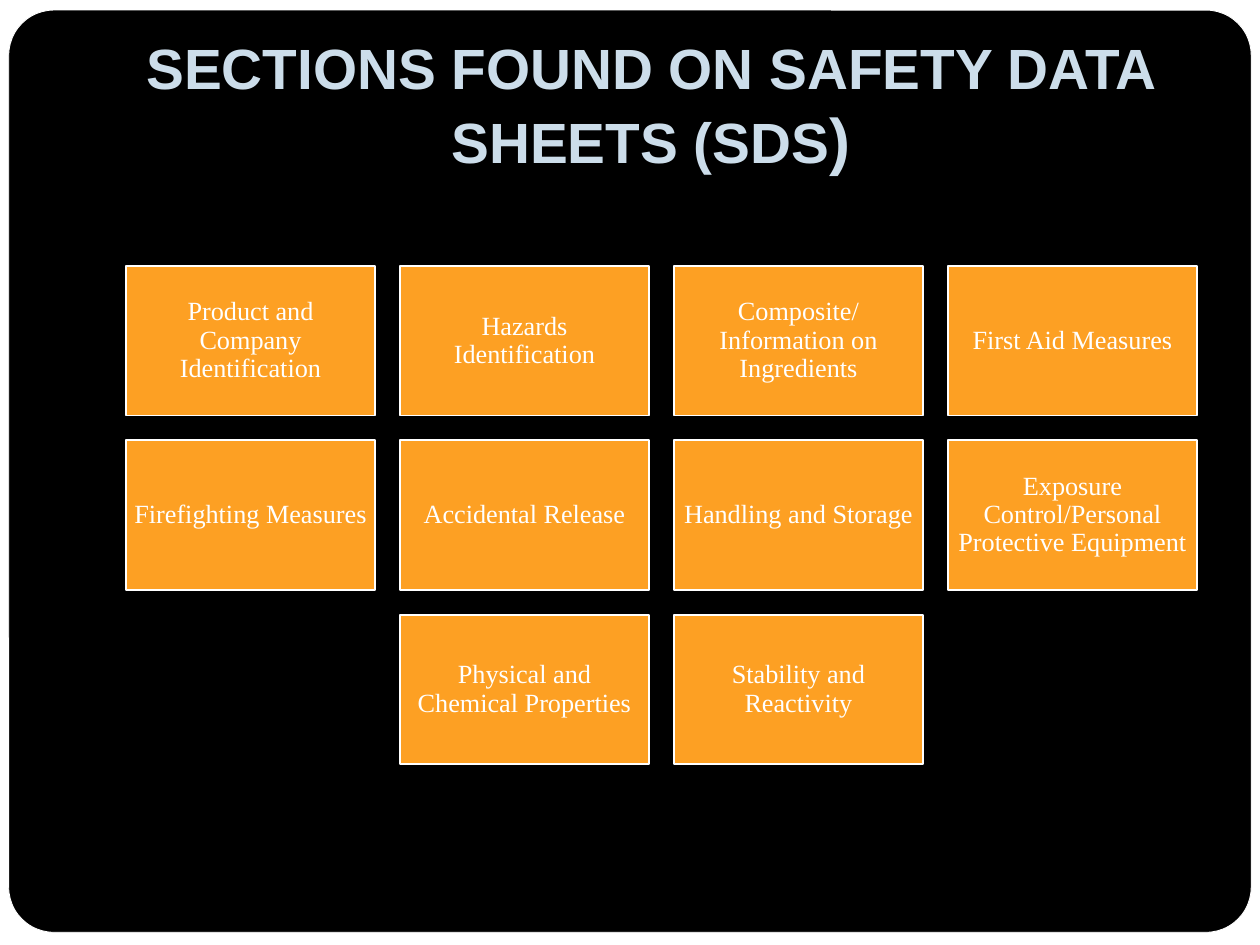
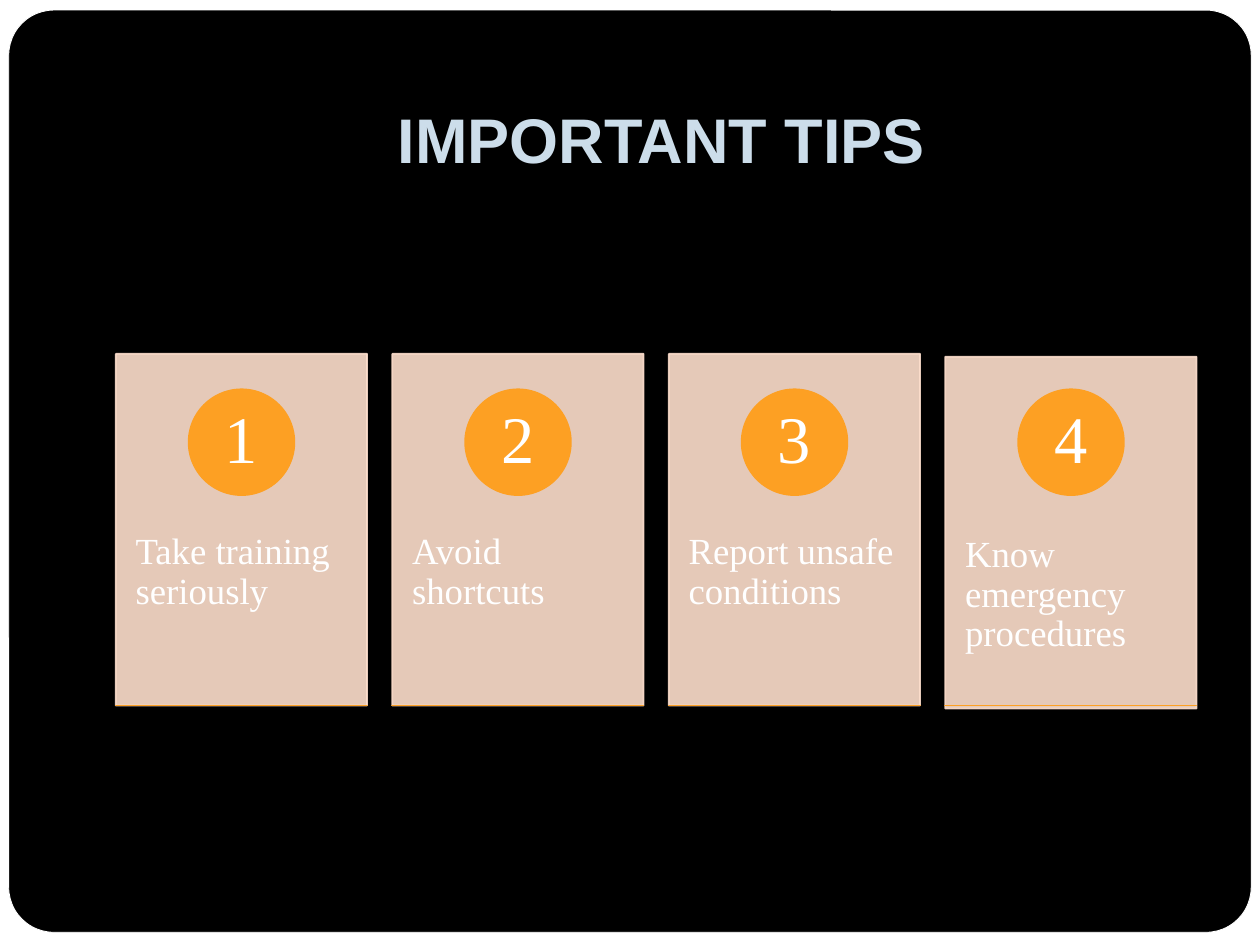
from lxml import etree
from pptx import Presentation
from pptx.dml.color import RGBColor
from pptx.enum import shapes, text
from pptx.oxml import ns
from pptx.util import Pt

# Content
SECTIONS_TITLE = [("SECTIONS FOUND ON SAFETY DATA SHEETS (SDS", 32.4), (")", 36)]
SECTIONS = [
    "Product and Company Identification",
    "Hazards Identification",
    "Composite/Information on Ingredients",
    "First Aid Measures",
    "Firefighting Measures",
    "Accidental Release",
    "Handling and Storage",
    "Exposure Control/Personal Protective Equipment",
    "Physical and Chemical Properties",
    "Stability and Reactivity",
]
TIPS_TITLE = [("IMPORTANT TIPS", 36)]
# Each tip with the distance its card sits below the row
TIPS = [
    ("Take training seriously", 0),
    ("Avoid shortcuts", 0),
    ("Report unsafe conditions", 0),
    ("Know emergency procedures", 1.7),
]

# Shared look
COLORS = {"white": "FFFFFF", "black": "000000", "title": "CCDDEA",
          "orange": "FDA023", "peach": "FEDFCD"}
TITLE_FONT, BODY_FONT = "Arial", "Times New Roman"
SLIDE_W, SLIDE_H = 720, 540
COLUMNS = 4
RECT = shapes.MSO_SHAPE.RECTANGLE
CENTER, LEFT = text.PP_ALIGN.CENTER, text.PP_ALIGN.LEFT
MIDDLE, TOP = text.MSO_ANCHOR.MIDDLE, text.MSO_ANCHOR.TOP


def rgb(name):
    return RGBColor.from_string(COLORS[name])


def set_insets(frame, left, top, right, bottom):
    frame.margin_left, frame.margin_top = Pt(left), Pt(top)
    frame.margin_right, frame.margin_bottom = Pt(right), Pt(bottom)


def add_block(slide, kind, box, fill, line, line_width=1, opacity=100):
    block = slide.shapes.add_shape(kind, *map(Pt, box))
    block.shadow.inherit = False
    block.fill.solid()
    block.fill.fore_color.rgb = rgb(fill)
    block.line.color.rgb = rgb(line)
    block.line.width = Pt(line_width)
    if opacity < 100:
        for color in block._element.spPr.iter(ns.qn("a:srgbClr")):
            etree.SubElement(color, ns.qn("a:alpha"), val=str(opacity * 1000))
    return block


def write(block, words, size, insets, align=CENTER, anchor=MIDDLE):
    frame = block.text_frame
    frame.word_wrap = True
    frame.vertical_anchor = anchor
    set_insets(frame, *insets)
    paragraph = frame.paragraphs[0]
    paragraph.text = words
    paragraph.alignment = align
    paragraph.line_spacing = 0.9
    paragraph.font.name = BODY_FONT
    paragraph.font.size = Pt(size)
    paragraph.font.color.rgb = rgb("white")


def add_framed_slide(deck, title_runs, title_left):
    slide = deck.slides.add_slide(deck.slide_layouts[6])
    slide.background.fill.solid()
    slide.background.fill.fore_color.rgb = rgb("white")
    panel = add_block(slide, shapes.MSO_SHAPE.ROUNDED_RECTANGLE,
                      (5, 5.75, 710, 527), "black", "white", 0.5)
    panel.adjustments[0] = 0.049

    frame = slide.shapes.add_textbox(Pt(title_left), Pt(18), Pt(612), Pt(90)).text_frame
    frame.word_wrap = True
    frame.vertical_anchor = text.MSO_ANCHOR.BOTTOM
    set_insets(frame, 7.2, 3.6, 7.2, 7.2)
    title = frame.paragraphs[0]
    title.alignment = CENTER
    title.font.name = TITLE_FONT
    title.font.bold = True
    title.font.color.rgb = rgb("title")
    for words, size in title_runs:
        run = title.add_run()
        run.text = words
        run.font.size = Pt(size)
    return slide


def build_sections(deck):
    slide = add_framed_slide(deck, SECTIONS_TITLE, 66)
    # Tiles fill the width, gaps a tenth of a tile, short rows centred
    left, top, width = 72, 152, 612
    tile_w = width / (COLUMNS + (COLUMNS - 1) / 10)
    tile_h, gap = tile_w * 0.6, tile_w / 10
    for start in range(0, len(SECTIONS), COLUMNS):
        row = SECTIONS[start:start + COLUMNS]
        row_left = left + (COLUMNS - len(row)) * (tile_w + gap) / 2
        y = top + start // COLUMNS * (tile_h + gap)
        for column, section in enumerate(row):
            x = row_left + column * (tile_w + gap)
            tile = add_block(slide, RECT, (x, y, tile_w, tile_h), "orange", "white")
            write(tile, section, 15, (4.5, 4.5, 4.5, 4.5))


def build_tips(deck):
    slide = add_framed_slide(deck, TIPS_TITLE, 72)
    left, top, card_w, card_h, pitch = 66.2, 202.2, 143.6, 201, 158
    badge_size, badge_drop = 60.4, 20.3
    for index, (tip, drop) in enumerate(TIPS):
        x = left + index * pitch
        card = add_block(slide, RECT, (x, top + drop, card_w, card_h),
                         "peach", "peach", opacity=90)
        write(card, tip, 21, (11.3, 102.2, 11.3, 26), LEFT, TOP)
        badge = add_block(slide, shapes.MSO_SHAPE.OVAL,
                          (x + (card_w - badge_size) / 2, top + badge_drop,
                           badge_size, badge_size), "orange", "orange")
        write(badge, str(index + 1), 38, (4.7, 0.9, 4.7, 0.9))
        add_block(slide, RECT, (x, top + card_h, card_w, 0), "orange", "orange")


def main():
    deck = Presentation()
    deck.slide_width, deck.slide_height = Pt(SLIDE_W), Pt(SLIDE_H)
    build_sections(deck)
    build_tips(deck)
    deck.save("out.pptx")


if __name__ == "__main__":
    main()
